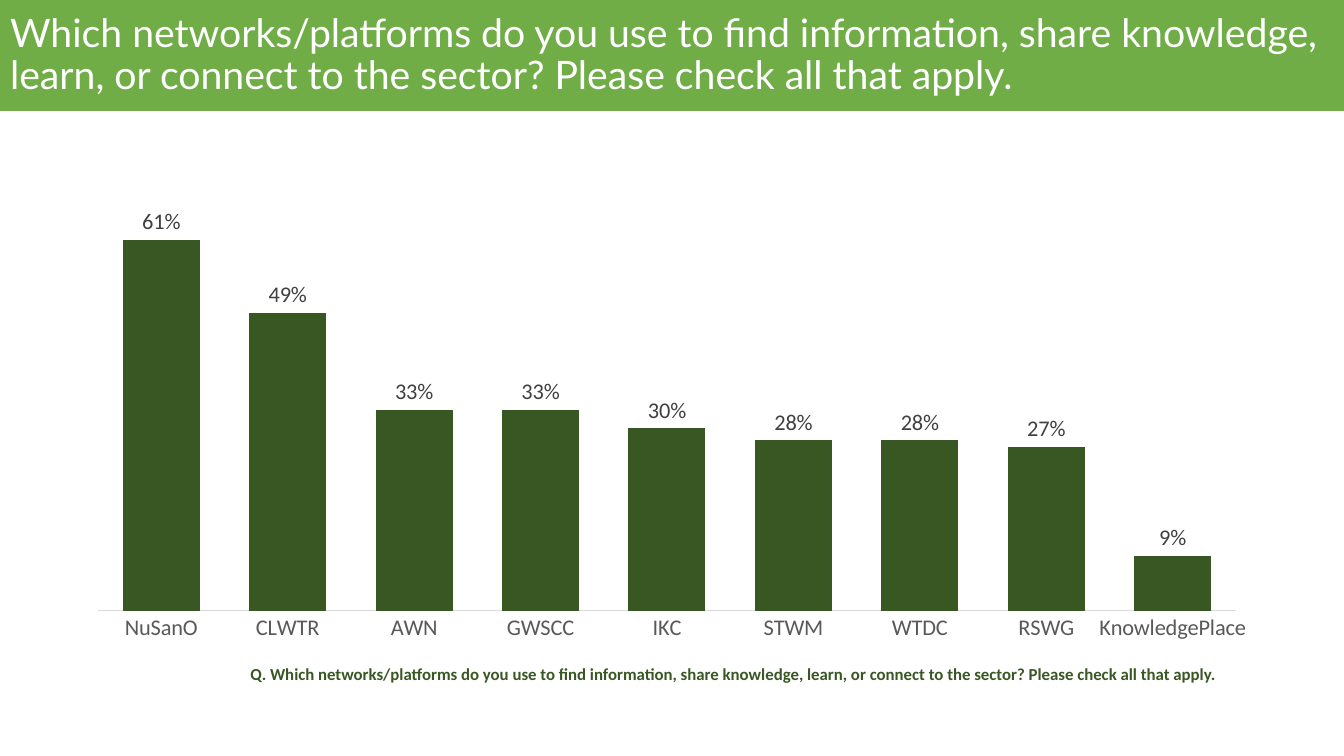
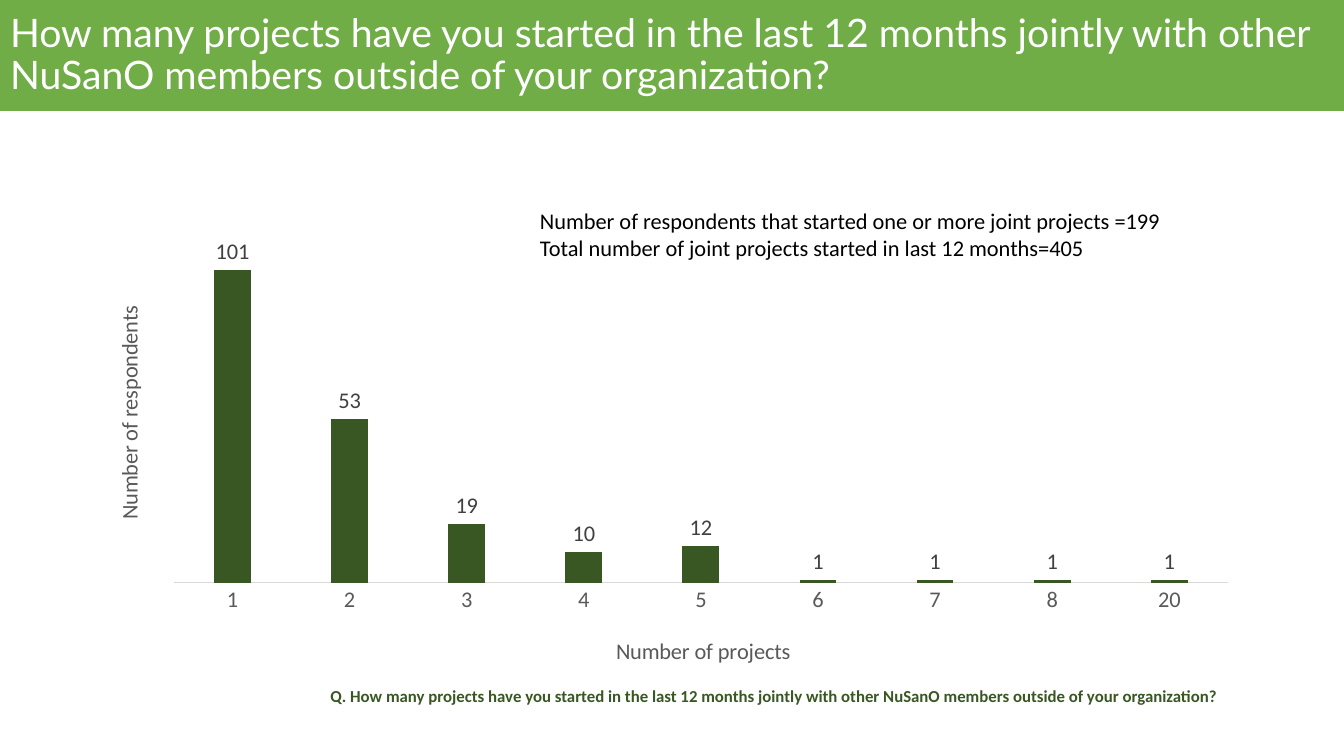
from dataclasses import dataclass
from typing import Optional

from lxml import etree
from pptx import Presentation
from pptx import util as u
from pptx.chart.data import CategoryChartData
from pptx.dml.color import RGBColor
from pptx.enum import chart as ch
from pptx.enum import text as t
from pptx.oxml.ns import qn

EMU_PER_PX = 914400 / 100.8
SLIDE_W, SLIDE_H = 1344, 756
BAND_H = 111
TITLE_FONT, BODY_FONT = "Lato", "Calibri"
COLORS = {
    "band": "70AD47",
    "bar": "385723",
    "axis_text": "595959",
    "label": "404040",
    "axis_line": "D9D9D9",
    "white": "FFFFFF",
    "black": "000000",
}


@dataclass(frozen=True)
class Box:
    left: int
    top: int
    width: int
    height: int

    def emu(self) -> list[u.Emu]:
        return [px(v) for v in (self.left, self.top, self.width, self.height)]


@dataclass(frozen=True)
class AxisTitles:
    category: str
    category_at: Box
    value: str


@dataclass(frozen=True)
class BarChart:
    frame: Box
    plot: Box
    answers: dict[str, float]
    maximum: float
    number_format: str
    gap: int
    titles: Optional[AxisTitles] = None


@dataclass(frozen=True)
class Note:
    box: Box
    lines: tuple[str, ...]


@dataclass(frozen=True)
class SurveySlide:
    question: str
    question_box: Box
    chart: BarChart
    note: Optional[Note] = None


SURVEY = (
    SurveySlide(
        "Which networks/platforms do you use to find information, share knowledge, "
        "learn, or connect to the sector? Please check all that apply.",
        Box(207, 659, 1020, 30),
        BarChart(
            frame=Box(75, 172, 1195, 480),
            plot=Box(98, 185, 1138, 426),
            answers={
                "NuSanO": 0.61, "CLWTR": 0.49, "AWN": 0.33,
                "GWSCC": 0.33, "IKC": 0.30, "STWM": 0.28,
                "WTDC": 0.28, "RSWG": 0.27, "KnowledgePlace": 0.09,
            },
            maximum=0.7,
            number_format="0%",
            gap=64,
        ),
    ),
    SurveySlide(
        "How many projects have you started in the last 12 months jointly with other "
        "NuSanO members outside of your organization?",
        Box(286, 681, 942, 30),
        BarChart(
            frame=Box(93, 202, 1159, 480),
            plot=Box(174, 211, 1054, 372),
            answers={
                "1": 101, "2": 53, "3": 19, "4": 10, "5": 12,
                "6": 1, "7": 1, "8": 1, "20": 1,
            },
            maximum=120,
            number_format="General",
            gap=219,
            titles=AxisTitles(
                "Number of projects", Box(612, 632, 178, 24), "Number of respondents"
            ),
        ),
        Note(
            Box(530, 202, 722, 65),
            (
                "Number of respondents that started one or more joint projects =199",
                "Total number of joint projects started in last 12 months=405",
            ),
        ),
    ),
)


def px(length: int) -> u.Emu:
    return u.Emu(round(length * EMU_PER_PX))


def rgb(name: str) -> RGBColor:
    return RGBColor.from_string(COLORS[name])


def set_font(font, size: int, color: str, family: str = BODY_FONT, bold: bool = False) -> None:
    font.name, font.size, font.bold = family, u.Pt(size), bold
    font.color.rgb = rgb(color)


def place_in_chart(part, box: Box, frame: Box, index: int, inner: bool = False) -> None:
    """Pin a chart part at box; index is where its c:layout belongs among the children."""
    for old in part.findall(qn("c:layout")):
        part.remove(old)
    layout = etree.Element(qn("c:layout"))
    manual = etree.SubElement(layout, qn("c:manualLayout"))
    settings = {
        "xMode": "edge",
        "yMode": "edge",
        "x": (box.left - frame.left) / frame.width,
        "y": (box.top - frame.top) / frame.height,
    }
    if inner:
        settings = {"layoutTarget": "inner", **settings}
        settings |= {"w": box.width / frame.width, "h": box.height / frame.height}
    for tag, value in settings.items():
        etree.SubElement(manual, qn(f"c:{tag}")).set("val", str(value))
    part.insert(index, layout)


def add_axis_title(axis, wording: str):
    frame = axis.axis_title.text_frame
    frame.text = wording
    set_font(frame.paragraphs[0].font, 16, "axis_text")
    return frame


def add_bar_chart(slide, spec: BarChart) -> None:
    data = CategoryChartData(number_format=spec.number_format)
    data.categories = list(spec.answers)
    data.add_series("Series 1", list(spec.answers.values()))
    chart = slide.shapes.add_chart(
        ch.XL_CHART_TYPE.COLUMN_CLUSTERED, *spec.frame.emu(), data
    ).chart
    chart.has_title = chart.has_legend = False
    set_font(chart.font, 16, "black")

    bars = chart.plots[0]
    bars.gap_width, bars.overlap, bars.vary_by_categories = spec.gap, -27, False
    fill = bars.series[0].format.fill
    fill.solid()
    fill.fore_color.rgb = rgb("bar")
    bars.has_data_labels = True
    labels = bars.data_labels
    labels.show_value = True
    labels.position = ch.XL_LABEL_POSITION.OUTSIDE_END
    labels.number_format, labels.number_format_is_linked = spec.number_format, False
    set_font(labels.font, 16, "label")

    categories, values = chart.category_axis, chart.value_axis
    categories.major_tick_mark = categories.minor_tick_mark = ch.XL_TICK_MARK.NONE
    set_font(categories.tick_labels.font, 16, "axis_text")
    categories.format.line.color.rgb = rgb("axis_line")
    categories.format.line.width = u.Pt(0.75)
    values.has_major_gridlines = values.visible = False
    values.minimum_scale, values.maximum_scale = 0, spec.maximum

    plot_area = chart.element.find(".//" + qn("c:plotArea"))
    place_in_chart(plot_area, spec.plot, spec.frame, 0, inner=True)
    if spec.titles:
        add_axis_title(categories, spec.titles.category)
        title = plot_area.find(qn("c:catAx")).find(qn("c:title"))
        place_in_chart(title, spec.titles.category_at, spec.frame, 1)
        add_axis_title(values, spec.titles.value)
        turned = plot_area.find(qn("c:valAx")).find(".//" + qn("a:bodyPr"))
        turned.set("rot", "-5400000")
        turned.set("vert", "horz")


def add_text(slide, box: Box, lines: tuple[str, ...], size: int, color: str,
             align=t.PP_ALIGN.LEFT, bold: bool = False) -> None:
    frame = slide.shapes.add_textbox(*box.emu()).text_frame
    frame.word_wrap = True
    frame.text = "\n".join(lines)
    for paragraph in frame.paragraphs:
        paragraph.alignment = align
        set_font(paragraph.font, size, color, bold=bold)


def fill_title_band(slide, question: str) -> None:
    band = slide.shapes.title
    band.left, band.top, band.width, band.height = Box(0, 0, SLIDE_W, BAND_H).emu()
    band.fill.solid()
    band.fill.fore_color.rgb = rgb("band")
    frame = band.text_frame
    frame.text = question
    frame.word_wrap = True
    frame.auto_size = t.MSO_AUTO_SIZE.NONE
    frame.vertical_anchor = t.MSO_ANCHOR.MIDDLE
    heading = frame.paragraphs[0]
    heading.alignment = t.PP_ALIGN.LEFT
    heading.line_spacing = 0.9
    set_font(heading.font, 28, "white", TITLE_FONT)


def add_survey_slide(deck, spec: SurveySlide) -> None:
    slide = deck.slides.add_slide(deck.slide_layouts.get_by_name("Title Only"))
    fill_title_band(slide, spec.question)
    add_bar_chart(slide, spec.chart)
    add_text(slide, spec.question_box, (f"Q. {spec.question}",), 12, "bar",
             t.PP_ALIGN.RIGHT, bold=True)
    if spec.note:
        add_text(slide, spec.note.box, spec.note.lines, 16, "black")


def main() -> None:
    deck = Presentation()
    deck.slide_width, deck.slide_height = px(SLIDE_W), px(SLIDE_H)
    for spec in SURVEY:
        add_survey_slide(deck, spec)
    deck.save("out.pptx")


if __name__ == "__main__":
    main()
